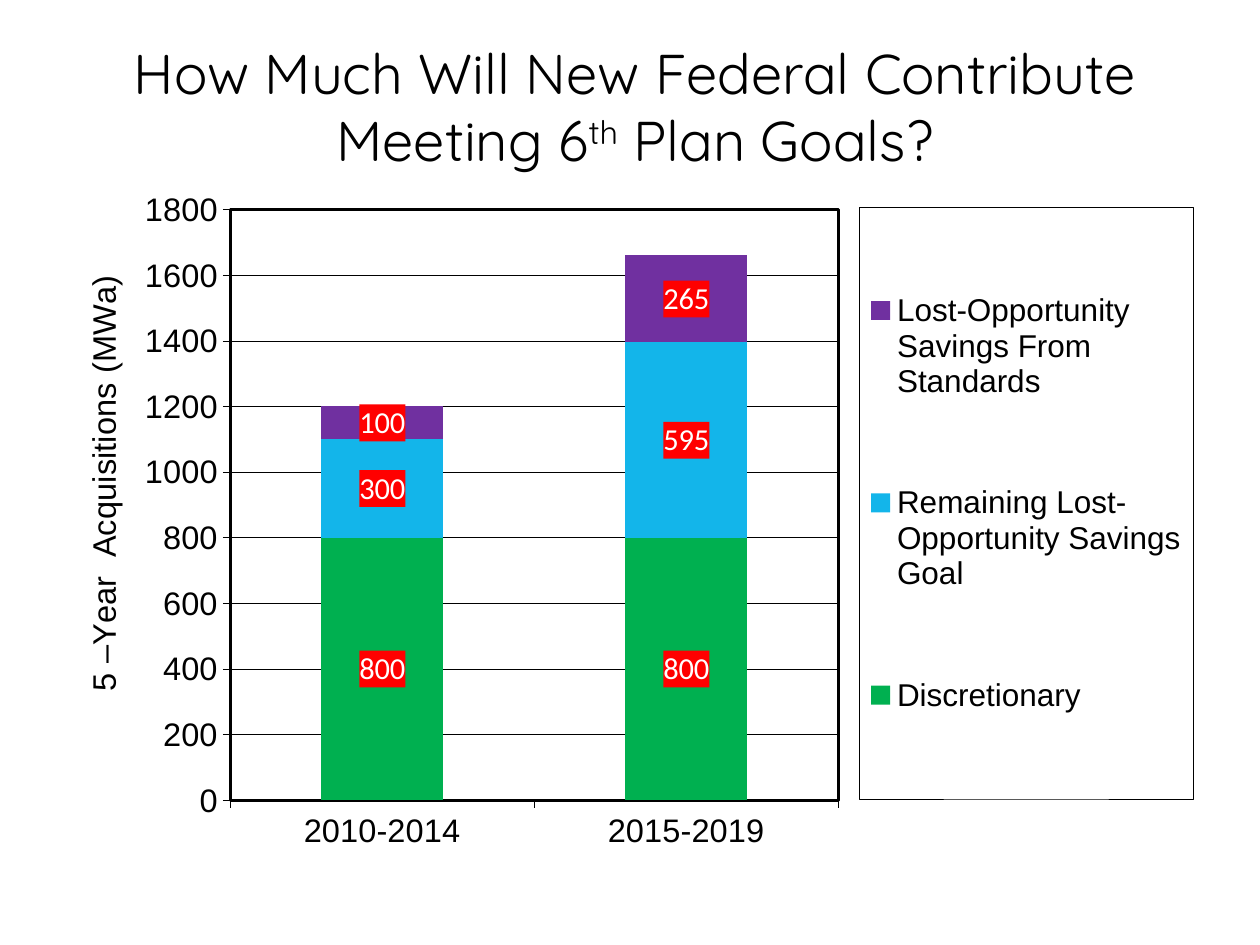
"""Build the slide on new federal standards and the 6th Plan goals."""
from dataclasses import dataclass

from lxml import etree
from pptx import Presentation
from pptx.chart.data import CategoryChartData
from pptx.dml.color import RGBColor
from pptx.enum.chart import XL_CHART_TYPE as ChartType
from pptx.enum.chart import XL_LABEL_POSITION as LabelPos
from pptx.enum.chart import XL_LEGEND_POSITION as LegendPos
from pptx.enum.chart import XL_TICK_MARK as TickMark
from pptx.enum.text import MSO_ANCHOR as Anchor
from pptx.enum.text import PP_ALIGN as Align
from pptx.oxml import parse_xml
from pptx.oxml.ns import nsdecls, qn
from pptx.util import Inches, Pt

COLORS = {
    "black": "000000",
    "white": "FFFFFF",
    "red": "FF0000",
    "green": "00B050",
    "blue": "13B5EA",
    "purple": "7030A0",
}


@dataclass
class Savings:
    name: str
    values: tuple[int, int]
    color: str


PERIODS = ("2010-2014", "2015-2019")
SAVINGS = (
    Savings("Discretionary", (800, 800), "green"),
    Savings("Remaining Lost-Opportunity Savings Goal", (300, 595), "blue"),
    Savings("Lost-Opportunity Savings From Standards", (100, 265), "purple"),
)
TITLE_RUNS = (
    ("How Much Will New Federal Contribute Meeting 6", None),
    ("th", "30000"),
    (" Plan Goals?", None),
)


def rgb(color: str) -> RGBColor:
    return RGBColor.from_string(COLORS[color])


def set_font(font, name: str, size: float, color: str = "black") -> None:
    values = {"name": name, "size": Pt(size), "bold": False}
    for key, value in values.items():
        setattr(font, key, value)
    font.color.rgb = rgb(color)


def set_line(line, width: float) -> None:
    line.color.rgb = rgb("black")
    line.width = Pt(width)


def sp_pr(fill: str | None = None, line: float | None = None) -> etree._Element:
    """Make chart shape properties with an optional fill and black outline."""
    def solid(color: str) -> str:
        return f'<a:solidFill><a:srgbClr val="{COLORS[color]}"/></a:solidFill>'

    body = solid(fill) if fill else "<a:noFill/>"
    if line:
        body += f'<a:ln w="{Pt(line)}">{solid("black")}</a:ln>'
    return parse_xml(f'<c:spPr {nsdecls("c", "a")}>{body}</c:spPr>')


def set_layout(element, index: int, x: float, y: float,
               w: float | None = None, h: float | None = None,
               inner: bool = False) -> None:
    """Place a chart part by fractions of the chart area."""
    for old in element.findall(qn("c:layout")):
        element.remove(old)
    parts = [("layoutTarget", "inner")] if inner else []
    parts += [("xMode", "edge"), ("yMode", "edge"),
              ("x", x), ("y", y), ("w", w), ("h", h)]
    body = "".join(f'<c:{tag} val="{value}"/>' for tag, value in parts
                   if value is not None)
    element.insert(index, parse_xml(
        f'<c:layout {nsdecls("c")}><c:manualLayout>{body}'
        "</c:manualLayout></c:layout>"))


def add_title(slide) -> None:
    s = slide.shapes.title
    s.left, s.top, s.width, s.height = map(Inches, (0.33, 0.25, 9.42, 1.17))
    tf = s.text_frame
    tf.vertical_anchor = Anchor.MIDDLE
    p = tf.paragraphs[0]
    p.alignment = Align.CENTER
    for text, baseline in TITLE_RUNS:
        r = p.add_run()
        r.text = text
        set_font(r.font, "Quicksand", 32)
        if baseline:
            r.font._element.set("baseline", baseline)


def format_series(series, savings: Savings) -> None:
    series.format.fill.solid()
    series.format.fill.fore_color.rgb = rgb(savings.color)
    labels = series.data_labels
    labels.show_value = True
    labels.position = LabelPos.CENTER
    set_font(labels.font, "Calibri", 17.4, "white")
    labels._element.find(qn("c:txPr")).addprevious(sp_pr("red"))


def format_axes(chart) -> None:
    for axis in (chart.category_axis, chart.value_axis):
        axis.major_tick_mark = TickMark.OUTSIDE
        axis.minor_tick_mark = TickMark.NONE
        set_font(axis.tick_labels.font, "Arial", 18.6)
        set_line(axis.format.line, 0.25)
    axis = chart.value_axis
    scale = {"minimum_scale": 0, "maximum_scale": 1800, "major_unit": 200}
    for key, value in scale.items():
        setattr(axis, key, value)
    set_line(axis.major_gridlines.format.line, 0.25)
    title = axis.axis_title
    p = title.text_frame.paragraphs[0]
    r = p.add_run()
    r.text = "5 –Year  Acquisitions (MWa)"
    set_font(r.font, "Arial", 18.6)
    set_layout(title._element, 1, 0.02, 0.13)


def format_legend(chart) -> None:
    chart.has_legend = True
    legend = chart.legend
    legend.position = LegendPos.RIGHT
    legend.include_in_layout = False
    set_font(legend.font, "Arial", 18)
    element = legend._element
    set_layout(element, 1, 0.7, 0.04, 0.29, 0.85)
    element.find(qn("c:txPr")).addprevious(sp_pr(line=0.25))


def add_savings_chart(slide) -> None:
    data = CategoryChartData()
    data.categories = PERIODS
    for savings in SAVINGS:
        data.add_series(savings.name, savings.values)
    box = map(Inches, (0.42, 1.42, 9.14, 5.53))
    chart = slide.shapes.add_chart(ChartType.COLUMN_STACKED, *box, data).chart
    chart.has_title = False
    set_font(chart.font, "Arial", 17.4)
    plot = chart.plots[0]
    plot.gap_width, plot.overlap = 150, 100
    plot.vary_by_categories = False
    for series, savings in zip(plot.series, SAVINGS):
        format_series(series, savings)
    format_axes(chart)
    format_legend(chart)
    area = chart._chartSpace.chart.plotArea
    set_layout(area, 0, 0.154, 0.044, 0.528, 0.848, inner=True)
    area.append(sp_pr(line=1.5))


def main() -> None:
    prs = Presentation()
    prs.slide_width, prs.slide_height = Inches(10), Inches(7.5)
    slide = prs.slides.add_slide(prs.slide_layouts[5])
    add_title(slide)
    add_savings_chart(slide)
    prs.save("out.pptx")


if __name__ == "__main__":
    main()
